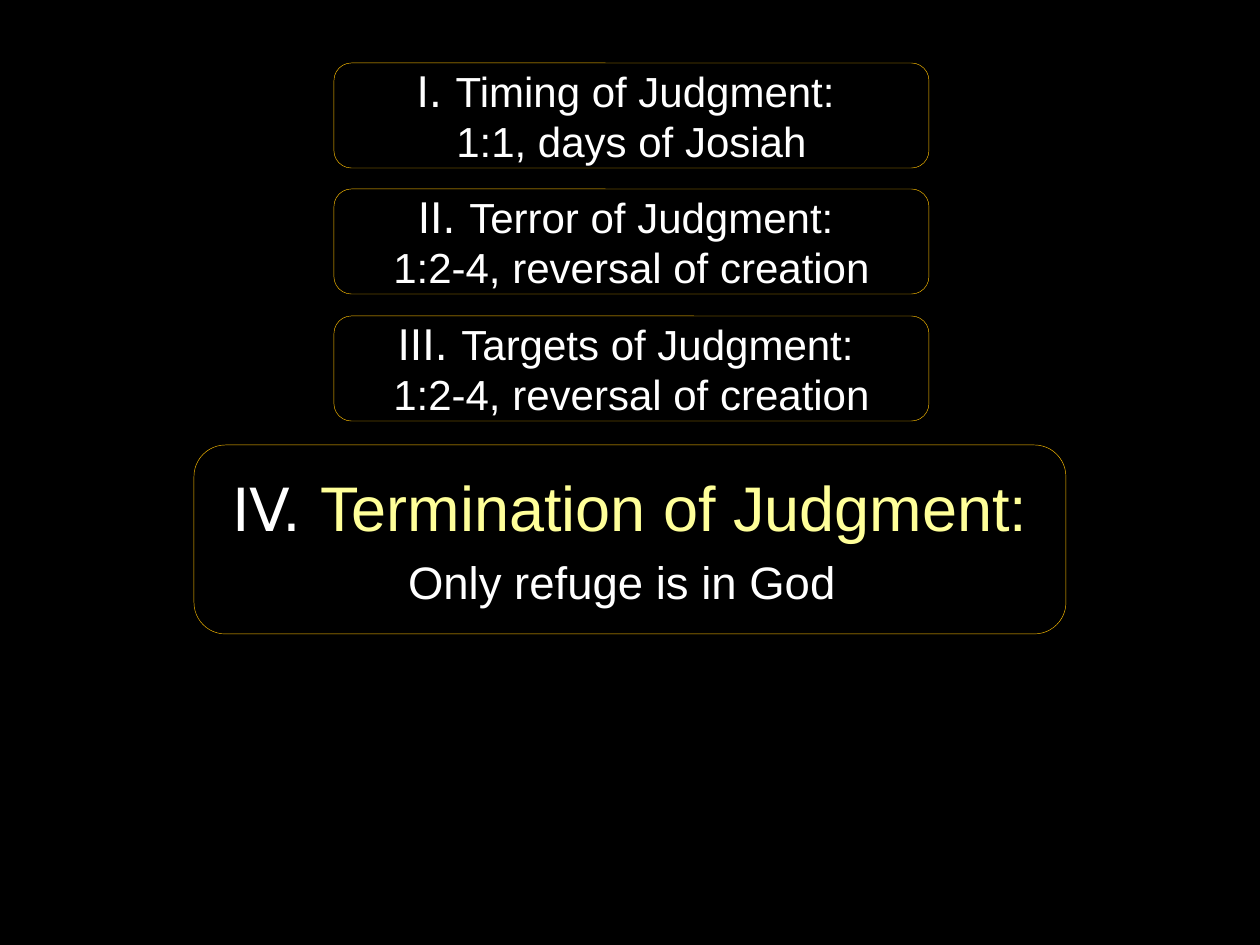
from dataclasses import dataclass

import pptx
import pptx.dml.color
import pptx.enum.shapes
import pptx.enum.text
import pptx.util

RGB = pptx.dml.color.RGBColor.from_string
SCALE = 914400 / 126


@dataclass(frozen=True)
class Theme:
    black: str = "000000"
    gold: str = "FFC000"
    white: str = "FFFFFF"
    yellow: str = "FFFF99"
    numeral_font: str = "DejaVu Sans"
    body_font: str = "Arial"
    point_size: int = 24
    numeral_size: int = 34
    heading_size: int = 36
    detail_size: int = 26
    space_size: int = 32
    line_width: float = 0.25


T = Theme()


@dataclass(frozen=True)
class Span:
    text: str
    size: int = T.point_size
    font: str = T.body_font
    color: str = T.white


@dataclass(frozen=True)
class Box:
    x: int
    y: int
    w: int
    h: int
    lines: list[list[Span]]


def px(n: int) -> int:
    return pptx.util.Emu(round(n * SCALE))


def point(y: int, numeral: str, heading: str, detail: str) -> Box:
    lines = [[Span(numeral, font=T.numeral_font), Span(heading)], [Span(detail)]]
    return Box(334, y, 595, 105, lines)


def draw_box(s: pptx.slide.Slide, box: Box) -> None:
    sp = s.shapes.add_shape(
        pptx.enum.shapes.MSO_SHAPE.ROUNDED_RECTANGLE,
        px(box.x), px(box.y), px(box.w), px(box.h),
    )
    sp.shadow.inherit = False
    sp.fill.solid()
    sp.fill.fore_color.rgb = RGB(T.black)
    sp.line.color.rgb = RGB(T.gold)
    sp.line.width = pptx.util.Pt(T.line_width)
    tf = sp.text_frame
    tf.word_wrap = True
    tf.vertical_anchor = pptx.enum.text.MSO_ANCHOR.MIDDLE
    p = tf.paragraphs[0]
    p.alignment = pptx.enum.text.PP_ALIGN.CENTER
    for i, line in enumerate(box.lines):
        if i:
            p.add_line_break()
        for span in line:
            r = p.add_run()
            r.text = span.text
            r.font.size = pptx.util.Pt(span.size)
            r.font.name = span.font
            r.font.color.rgb = RGB(span.color)


BOXES = [
    point(63, "I. ", "Timing of Judgment: ", "1:1, days of Josiah"),
    point(189, "II. ", "Terror of Judgment: ", "1:2-4, reversal of creation"),
    point(316, "III. ", "Targets of Judgment: ", "1:2-4, reversal of creation"),
    Box(194, 445, 872, 189, [
        [
            Span("IV. ", T.numeral_size, T.numeral_font),
            Span("Termination of Judgment:", T.heading_size, color=T.yellow),
        ],
        [Span("Only refuge is in God", T.detail_size), Span(" ", T.space_size)],
    ]),
]


def main() -> None:
    prs = pptx.Presentation()
    prs.slide_width, prs.slide_height = px(1260), px(945)
    s = prs.slides.add_slide(prs.slide_layouts[6])
    s.background.fill.solid()
    s.background.fill.fore_color.rgb = RGB(T.black)
    for box in BOXES:
        draw_box(s, box)
    prs.save("out.pptx")


if __name__ == "__main__":
    main()
